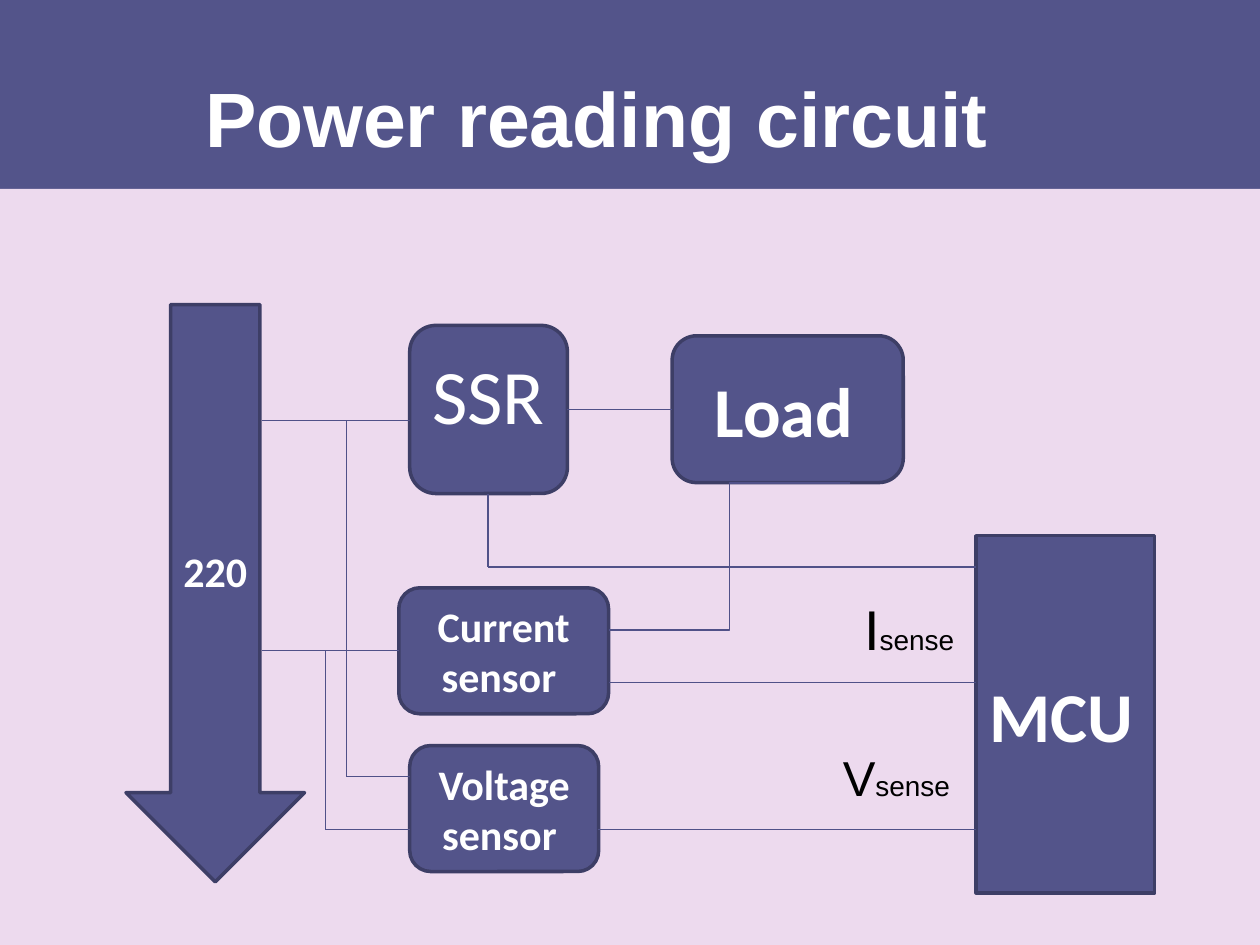
from dataclasses import dataclass
from itertools import pairwise

from lxml.etree import SubElement
from pptx import Presentation
from pptx.dml.color import RGBColor
from pptx.enum.shapes import MSO_CONNECTOR as CONN, MSO_SHAPE as SHAPE
from pptx.enum.text import MSO_ANCHOR as ANCHOR, PP_ALIGN as ALIGN
from pptx.oxml.ns import qn
from pptx.util import Cm, Pt

PURPLE, EDGE, WIRE = "53548A", "3D3E66", "505188"
PINK, WHITE, BLACK = "EDDAEE", "FFFFFF", "000000"


@dataclass
class Block:
    """A part of the circuit; lengths in cm."""
    text: str
    x: float
    y: float
    w: float
    h: float
    size: int
    kind: SHAPE = SHAPE.ROUNDED_RECTANGLE
    bold: bool = True
    insets: tuple = (0.25, 0.13, 0.25, 0.13)  # left, top, right, bottom


@dataclass
class Wire:
    """A route through (x, y) points in cm."""
    points: list
    kind: CONN = CONN.STRAIGHT


@dataclass
class Signal:
    """A large symbol followed by a small suffix."""
    symbol: str
    suffix: str
    x: float
    y: float
    size: int


BLOCKS = [
    Block("Load", 13.55, 6.77, 4.66, 2.96, 40, insets=(0.25, 0.13, 0.4, 0.13)),
    Block("Current sensor ", 8.04, 11.85, 4.23, 2.54, 24),
    Block("SSR", 8.26, 6.56, 3.18, 3.39, 44, bold=False,
          insets=(0.1, 0.13, 0.1, 0.77)),
    Block("Voltage sensor ", 8.26, 15.03, 3.81, 2.54, 24),
    Block("220", 2.54, 6.14, 3.6, 11.64, 24, SHAPE.DOWN_ARROW,
          insets=(0.1, 0.13, 0.1, 0.13)),
    Block("MCU", 19.68, 10.8, 3.6, 7.2, 40, SHAPE.RECTANGLE,
          insets=(0.1, 0.13, 0.26, 0.13)),
]

WIRES = [
    Wire([(5.29, 8.47), (8.26, 8.47)]),                   # mains to SSR
    Wire([(5.29, 13.12), (8.04, 13.12)]),                 # mains to current sensor
    Wire([(17.14, 9.74), (12.28, 12.7)], CONN.ELBOW),     # load to current sensor
    Wire([(11.43, 8.26), (13.55, 8.26)]),                 # SSR to load
    Wire([(6.98, 8.47), (6.98, 15.66), (8.26, 15.66)]),   # taps to voltage sensor
    Wire([(6.56, 13.12), (6.56, 16.72), (8.26, 16.72)]),
    Wire([(12.28, 13.76), (19.68, 13.76)]),               # sensors and SSR to MCU
    Wire([(12.06, 16.72), (19.68, 16.72)]),
    Wire([(9.84, 9.95), (9.84, 11.43), (19.68, 11.43)]),
]

SIGNALS = [
    Signal("I", "sense", 17.42, 11.98, 32),
    Signal("V", "sense", 16.99, 15.07, 28),
]


def rgb(value: str) -> RGBColor:
    return RGBColor.from_string(value)


def set_frame(tf, insets=(0, 0, 0, 0), anchor=ANCHOR.TOP, align=ALIGN.LEFT):
    """Set up a text frame and return its first paragraph."""
    tf.word_wrap = True
    tf.vertical_anchor = anchor
    (tf.margin_left, tf.margin_top,
     tf.margin_right, tf.margin_bottom) = map(Cm, insets)
    p = tf.paragraphs[0]
    p.alignment = align
    return p


def add_run(p, text: str, *, size: int, font="Arial", color=WHITE, bold=False):
    r = p.add_run()
    r.text = text
    r.font.name, r.font.size, r.font.bold = font, Pt(size), bold
    r.font.color.rgb = rgb(color)


def add_block(s, b: Block) -> None:
    sp = s.shapes.add_shape(b.kind, Cm(b.x), Cm(b.y), Cm(b.w), Cm(b.h))
    sp.shadow.inherit = False
    sp.fill.solid()
    sp.fill.fore_color.rgb = rgb(PURPLE)
    sp.line.color.rgb = rgb(EDGE)
    sp.line.width = Pt(2)
    p = set_frame(sp.text_frame, b.insets, ANCHOR.MIDDLE, ALIGN.CENTER)
    add_run(p, b.text, size=b.size, font="Calibri", bold=b.bold)


def add_wire(s, wire: Wire) -> None:
    for start, end in pairwise(wire.points):
        cx = s.shapes.add_connector(wire.kind, *map(Cm, start + end))
        cx.line.color.rgb = rgb(WIRE)
        cx.line.width = Pt(0.75)
        SubElement(cx._element.spPr, qn("a:effectLst"))


def add_signal(s, sig: Signal) -> None:
    box = s.shapes.add_textbox(Cm(sig.x), Cm(sig.y), Cm(2.6), Cm(1.3))
    p = set_frame(box.text_frame)
    add_run(p, sig.symbol, size=sig.size, color=BLACK)
    add_run(p, sig.suffix, size=16, color=BLACK)


def main() -> None:
    prs = Presentation()
    prs.slide_width, prs.slide_height = Cm(25.4), Cm(19.05)
    s = prs.slides.add_slide(prs.slide_layouts[6])

    # Purple backdrop with a pink content area
    s.background.fill.solid()
    s.background.fill.fore_color.rgb = rgb(PURPLE)
    body = s.shapes.add_shape(SHAPE.RECTANGLE, 0, Cm(3.81), Cm(25.4), Cm(15.24))
    body.shadow.inherit = False
    body.fill.solid()
    body.fill.fore_color.rgb = rgb(PINK)
    body.line.fill.background()

    # Title
    title = s.shapes.add_textbox(Cm(1.27), Cm(0.76), Cm(22.86), Cm(3.18))
    p = set_frame(title.text_frame, (0.25, 0.13, 1.58, 0.13),
                  ANCHOR.MIDDLE, ALIGN.CENTER)
    add_run(p, "Power reading circuit", size=44, bold=True)

    # Circuit
    for sig in SIGNALS:
        add_signal(s, sig)
    for block in BLOCKS:
        add_block(s, block)
    for wire in WIRES:
        add_wire(s, wire)

    prs.save("out.pptx")


if __name__ == "__main__":
    main()
